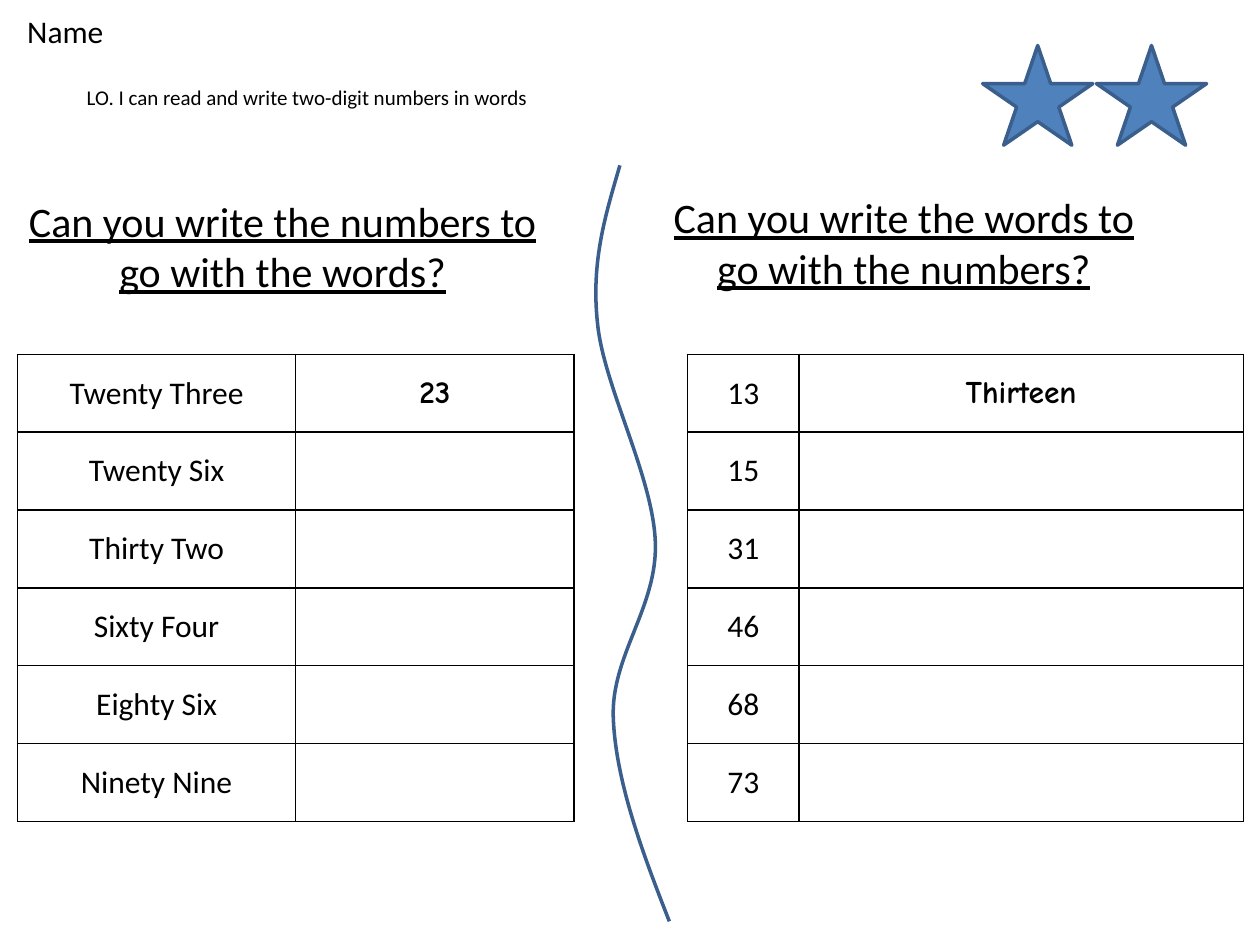
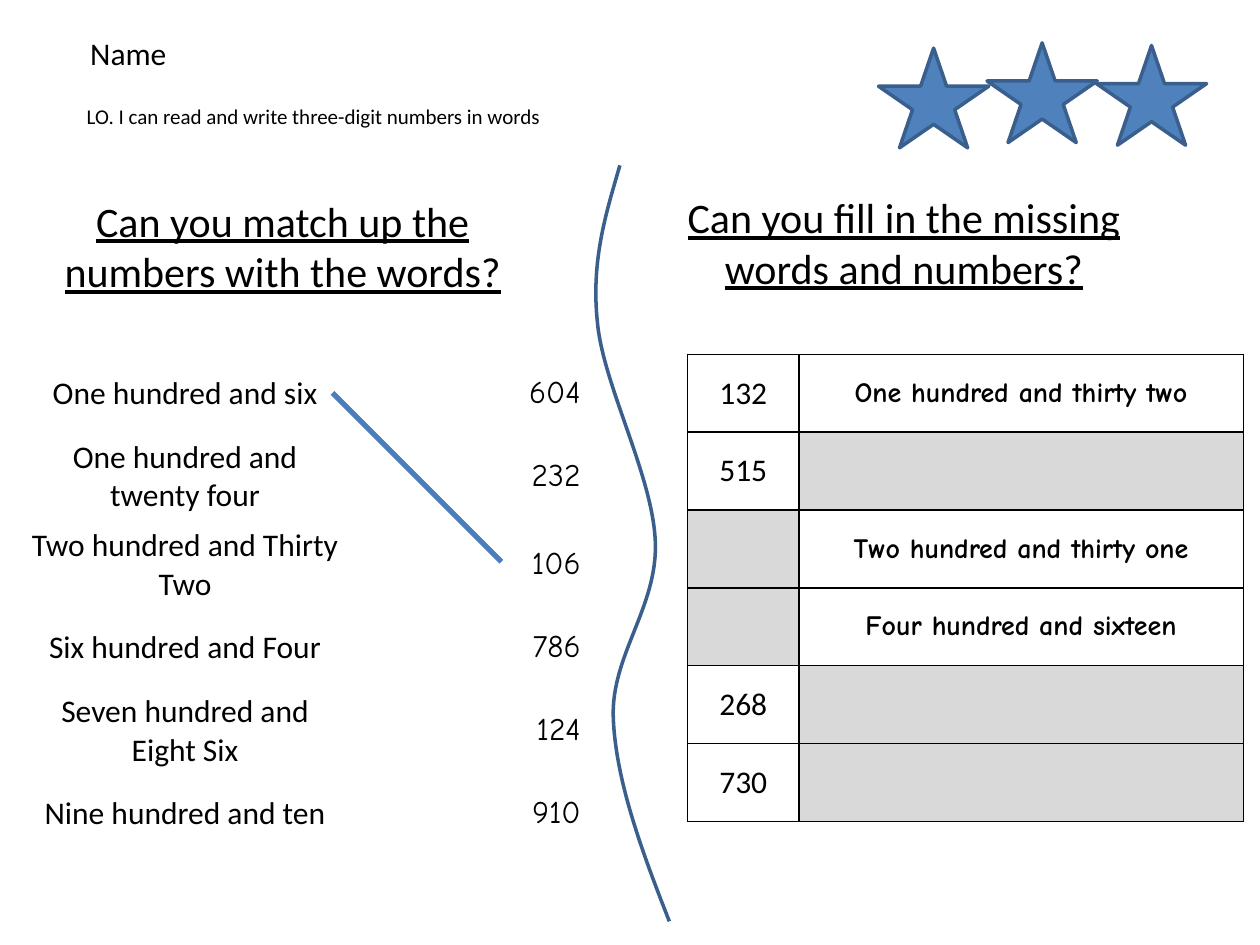
from dataclasses import dataclass

from lxml.etree import SubElement
from pptx import Presentation
from pptx.dml.color import RGBColor
from pptx.enum.shapes import MSO_CONNECTOR, MSO_SHAPE
from pptx.enum.text import MSO_ANCHOR, MSO_AUTO_SIZE, PP_ALIGN
from pptx.oxml.ns import qn
from pptx.util import Pt

COLOURS = {
    "text": "000000",
    "border": "000000",
    "star": "4F81BD",
    "outline": "3A5F8C",
    "match": "4B7EBC",
    "blank": "D9D9D9",
}
PRINT_FONT = "Calibri"
HAND_FONT = "Comic Neue"
TABLE_TOP = 202.5
LEFT_TABLE, RIGHT_TABLE = 10, 393
ROW_HEIGHT = 44.5
DIVIDER_START = (354.25, 94.5)
DIVIDER_CURVES = [
    (346.5, 121.5), (337.5, 149), (341.5, 185),
    (345, 220.5), (373, 272), (374.5, 309.5),
    (376, 347), (349, 374.5), (350.5, 410.5),
    (352, 446.5), (367, 487), (382.5, 526.5),
]


@dataclass
class Column:
    width: float
    font: str = PRINT_FONT
    size: float = 18
    bold: bool = False
    align: PP_ALIGN = PP_ALIGN.CENTER


class Worksheet:
    def __init__(self, presentation):
        self.presentation = presentation
        self.slide = None

    def colour(self, name):
        return RGBColor.from_string(COLOURS[name])

    def style(self, paragraph, size, font=PRINT_FONT, bold=False, underline=False, align=PP_ALIGN.LEFT):
        paragraph.alignment = align
        paragraph.font.name = font
        paragraph.font.size = Pt(size)
        paragraph.font.bold = bold
        paragraph.font.underline = underline
        paragraph.font.color.rgb = self.colour("text")

    def outline(self, shape, colour, width):
        shape.line.color.rgb = self.colour(colour)
        shape.line.width = Pt(width)

    def start(self, name_at, objective, objective_top, headings, stars):
        self.slide = self.presentation.slides.add_slide(self.presentation.slide_layouts[6])
        self.text("Name", *name_at, 58.5, 29, 18, wrap=False)
        self.text(objective, 42.5, objective_top, 487.5, 22, 12)
        for heading, left, top in zip(headings, (8.5, 363.5), (108, 106)):
            self.text(heading, left, top, 306, 65.5, 24, underline=True, align=PP_ALIGN.CENTER)
        self.divider()
        for left, top in stars:
            self.star(left, top)

    def text(self, words, left, top, width, height, size, wrap=True, **style):
        frame = self.slide.shapes.add_textbox(Pt(left), Pt(top), Pt(width), Pt(height)).text_frame
        frame.word_wrap = wrap
        frame.auto_size = MSO_AUTO_SIZE.SHAPE_TO_FIT_TEXT
        frame.text = words
        self.style(frame.paragraphs[0], size, **style)

    def star(self, left, top):
        shape = self.slide.shapes.add_shape(MSO_SHAPE.STAR_5_POINT, Pt(left), Pt(top), Pt(63), Pt(57))
        shape.shadow.inherit = False
        shape.fill.solid()
        shape.fill.fore_color.rgb = self.colour("star")
        self.outline(shape, "outline", 2)

    def divider(self):
        start_x, start_y = DIVIDER_START
        builder = self.slide.shapes.build_freeform(Pt(start_x), Pt(start_y))
        builder.add_line_segments([(Pt(x), Pt(y)) for x, y in DIVIDER_CURVES], close=False)
        shape = builder.convert_to_shape()
        shape.shadow.inherit = False
        shape.fill.background()
        self.outline(shape, "outline", 2)
        segments = list(shape.element.iter(qn("a:lnTo")))
        outline = segments[0].getparent()
        for first in range(0, len(segments), 3):
            curve = SubElement(outline, qn("a:cubicBezTo"))
            for segment in segments[first:first + 3]:
                curve.append(segment[0])
                outline.remove(segment)

    def match(self, start_x, start_y, end_x, end_y):
        connector = self.slide.shapes.add_connector(
            MSO_CONNECTOR.STRAIGHT, Pt(start_x), Pt(start_y), Pt(end_x), Pt(end_y))
        self.outline(connector, "match", 3)
        SubElement(connector.element.spPr, qn("a:effectLst"))

    def border(self, cell):
        properties = cell._tc.get_or_add_tcPr()
        for side in ("lnL", "lnR", "lnT", "lnB"):
            line = SubElement(properties, qn(f"a:{side}"), w=str(Pt(1)))
            fill = SubElement(line, qn("a:solidFill"))
            SubElement(fill, qn("a:srgbClr"), val=COLOURS["border"])

    def table(self, left, columns, rows, bordered=True, blank=None):
        width = sum(column.width for column in columns)
        table = self.slide.shapes.add_table(
            len(rows), len(columns), Pt(left), Pt(TABLE_TOP), Pt(width), Pt(ROW_HEIGHT * len(rows))).table
        table.first_row = table.horz_banding = False
        for index, column in enumerate(columns):
            table.columns[index].width = Pt(column.width)
        for row_index, row in enumerate(rows):
            table.rows[row_index].height = Pt(ROW_HEIGHT)
            for index, column in enumerate(columns):
                cell = table.cell(row_index, index)
                words = row[index]
                cell.vertical_anchor = MSO_ANCHOR.MIDDLE
                if bordered:
                    self.border(cell)
                if blank and not words:
                    cell.fill.solid()
                    cell.fill.fore_color.rgb = self.colour(blank)
                else:
                    cell.fill.background()
                if words:
                    cell.text = words
                    self.style(cell.text_frame.paragraphs[0], column.size, column.font,
                               column.bold, align=column.align)


def two_digit_slide(sheet):
    sheet.start(
        (8.5, 3.5), "LO. I can read and write two-digit numbers in words", 44.5,
        ("Can you write the numbers to go with the words?",
         "Can you write the words to go with the numbers?"),
        [(626.5, 26), (561.5, 26)])
    sheet.table(LEFT_TABLE, [Column(159), Column(159, HAND_FONT, bold=True)], [
        ("Twenty Three", "23"),
        ("Twenty Six", ""),
        ("Thirty Two", ""),
        ("Sixty Four", ""),
        ("Eighty Six", ""),
        ("Ninety Nine", ""),
    ])
    sheet.table(RIGHT_TABLE, [Column(63.5), Column(254, HAND_FONT, bold=True)], [
        ("13", "Thirteen"),
        ("15", ""),
        ("31", ""),
        ("46", ""),
        ("68", ""),
        ("73", ""),
    ])


def three_digit_slide(sheet):
    sheet.start(
        (44.5, 16), "LO. I can read and write three-digit numbers in words", 55.5,
        ("Can you match up the numbers with the words?",
         "Can you fill in the missing words and numbers?"),
        [(626.5, 26), (502, 27.5), (564, 24.5)])
    sheet.table(LEFT_TABLE, [Column(191.5), Column(137.5, HAND_FONT, align=PP_ALIGN.RIGHT)], [
        ("One hundred and six", "604"),
        ("One hundred and twenty four", "232"),
        ("Two hundred and Thirty Two", "106"),
        ("Six hundred and Four", "786"),
        ("Seven hundred and Eight Six", "124"),
        ("Nine hundred and ten", "910"),
    ], bordered=False)
    sheet.table(RIGHT_TABLE, [Column(63.5), Column(254, HAND_FONT, 16, True)], [
        ("132", "One hundred and thirty two"),
        ("515", ""),
        ("", "Two hundred and thirty one"),
        ("", "Four hundred and sixteen"),
        ("268", ""),
        ("730", ""),
    ], blank="blank")
    sheet.match(190, 224.5, 286.5, 321)


def main():
    presentation = Presentation()
    presentation.slide_width = Pt(720)
    presentation.slide_height = Pt(540)
    sheet = Worksheet(presentation)
    two_digit_slide(sheet)
    three_digit_slide(sheet)
    presentation.save("out.pptx")


if __name__ == "__main__":
    main()
